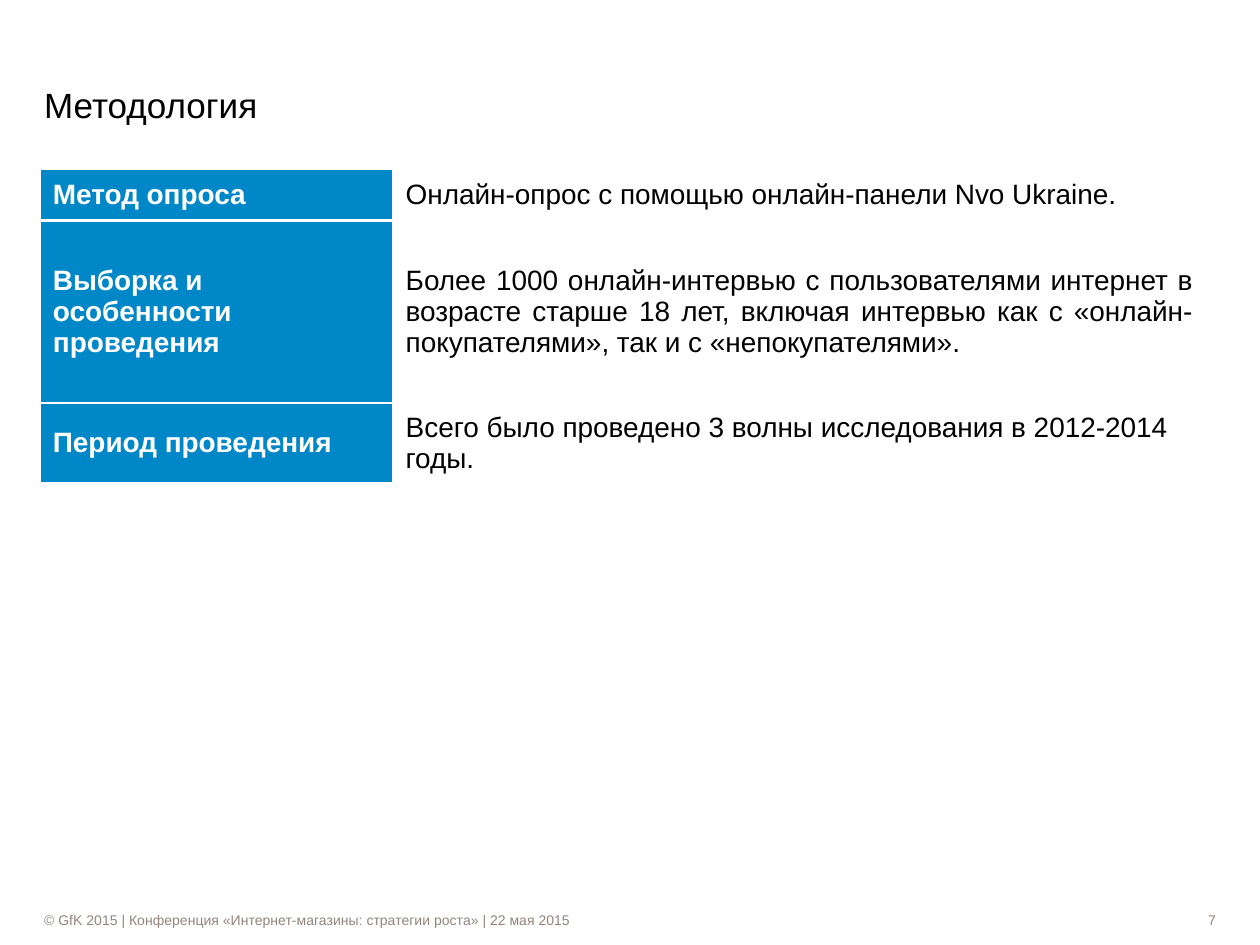
"""Build the survey methodology slide."""
from dataclasses import dataclass

from lxml.etree import SubElement
from pptx import Presentation
from pptx.dml.color import RGBColor
from pptx.enum.text import MSO_ANCHOR, PP_ALIGN
from pptx.oxml.ns import qn
from pptx.util import Inches, Pt

COLORS = {"white": "FFFFFF", "black": "000000", "blue": "0087C8", "gray": "928580"}
FONT = "Arial"


@dataclass(frozen=True)
class MethodRow:
    label: str
    description: str
    height: float
    alignment: PP_ALIGN = PP_ALIGN.JUSTIFY


@dataclass(frozen=True)
class FooterItem:
    text: str
    left: float
    width: float
    alignment: PP_ALIGN


METHOD_ROWS = [
    MethodRow("Метод опроса", "Онлайн-опрос с помощью онлайн-панели Nvo Ukraine.", 0.41),
    MethodRow(
        "Выборка и особенности проведения",
        "Более 1000 онлайн-интервью с пользователями интернет в возрасте старше 18 лет, "
        "включая интервью как с «онлайн-покупателями», так и с «непокупателями».",
        1.45,
    ),
    MethodRow(
        "Период проведения",
        "Всего было проведено 3 волны исследования в 2012-2014 годы.",
        0.58,
        PP_ALIGN.LEFT,
    ),
]
FOOTER_ITEMS = [
    FooterItem(
        "© GfK 2015 | Конференция «Интернет-магазины: стратегии роста» | 22 мая 2015",
        0.35, 7.72, PP_ALIGN.LEFT,
    ),
    FooterItem("7", 8.23, 1.42, PP_ALIGN.RIGHT),
]
COLUMN_WIDTHS = [2.8, 6.45]


def write_text(text_frame, text: str, size: float, color: str,
               alignment: PP_ALIGN = PP_ALIGN.LEFT, bold: bool = False) -> None:
    """Write one formatted run into the first paragraph."""
    paragraph = text_frame.paragraphs[0]
    paragraph.alignment = alignment
    run = paragraph.add_run()
    run.text = text
    run.font.name = FONT
    run.font.size = Pt(size)
    run.font.bold = bold
    run.font.color.rgb = RGBColor.from_string(COLORS[color])


def remove_margins(text_frame) -> None:
    """Set all four insets of a text frame to zero."""
    text_frame.margin_left = text_frame.margin_right = 0
    text_frame.margin_top = text_frame.margin_bottom = 0
    text_frame.word_wrap = True


def add_borders(cell, widths: dict[str, float]) -> None:
    """Add white borders to the named sides of a cell."""
    properties = cell._tc.get_or_add_tcPr()
    for side, width in widths.items():
        line = SubElement(properties, qn(f"a:ln{side}"), w=str(Pt(width)))
        fill = SubElement(line, qn("a:solidFill"))
        SubElement(fill, qn("a:srgbClr"), val=COLORS["white"])


def add_title(slide, text: str) -> None:
    """Place and fill the title placeholder."""
    title = slide.shapes.title
    title.left, title.top = Inches(0.35), Inches(0.29)
    title.width, title.height = Inches(6.93), Inches(0.71)
    remove_margins(title.text_frame)
    title.text_frame.vertical_anchor = MSO_ANCHOR.BOTTOM
    write_text(title.text_frame, text, 20, "black")


def add_method_table(slide, rows: list[MethodRow]) -> None:
    """Draw the table of labels and descriptions."""
    table = slide.shapes.add_table(
        len(rows), len(COLUMN_WIDTHS), Inches(0.32), Inches(1.34),
        Inches(sum(COLUMN_WIDTHS)), Inches(sum(row.height for row in rows)),
    ).table
    table.first_row = table.horz_banding = False
    for column, width in zip(table.columns, COLUMN_WIDTHS):
        column.width = Inches(width)
    for index, row in enumerate(rows):
        table.rows[index].height = Inches(row.height)
        label, description = table.rows[index].cells
        bottom = 1 if index == len(rows) - 1 else 1.5
        add_borders(label, {"L": 1, "R": 1, "T": 1.5, "B": bottom})
        label.fill.solid()
        label.fill.fore_color.rgb = RGBColor.from_string(COLORS["blue"])
        description.fill.background()
        label.vertical_anchor = description.vertical_anchor = MSO_ANCHOR.MIDDLE
        write_text(label.text_frame, row.label, 16, "white", bold=True)
        write_text(description.text_frame, row.description, 16, "black", row.alignment)


def add_footer_item(slide, item: FooterItem) -> None:
    """Draw one piece of footer text."""
    shape = slide.shapes.add_textbox(
        Inches(item.left), Inches(7.22), Inches(item.width), Inches(0.16))
    shape.fill.solid()
    shape.fill.fore_color.rgb = RGBColor.from_string(COLORS["white"])
    remove_margins(shape.text_frame)
    shape.text_frame.vertical_anchor = MSO_ANCHOR.MIDDLE
    write_text(shape.text_frame, item.text, 8, "gray", item.alignment)


def main() -> None:
    """Create and save the presentation."""
    presentation = Presentation()
    presentation.slide_width, presentation.slide_height = Inches(10), Inches(7.5)
    slide = presentation.slides.add_slide(presentation.slide_layouts[5])
    add_title(slide, "Методология")
    for item in FOOTER_ITEMS:
        add_footer_item(slide, item)
    add_method_table(slide, METHOD_ROWS)
    presentation.save("out.pptx")


if __name__ == "__main__":
    main()
